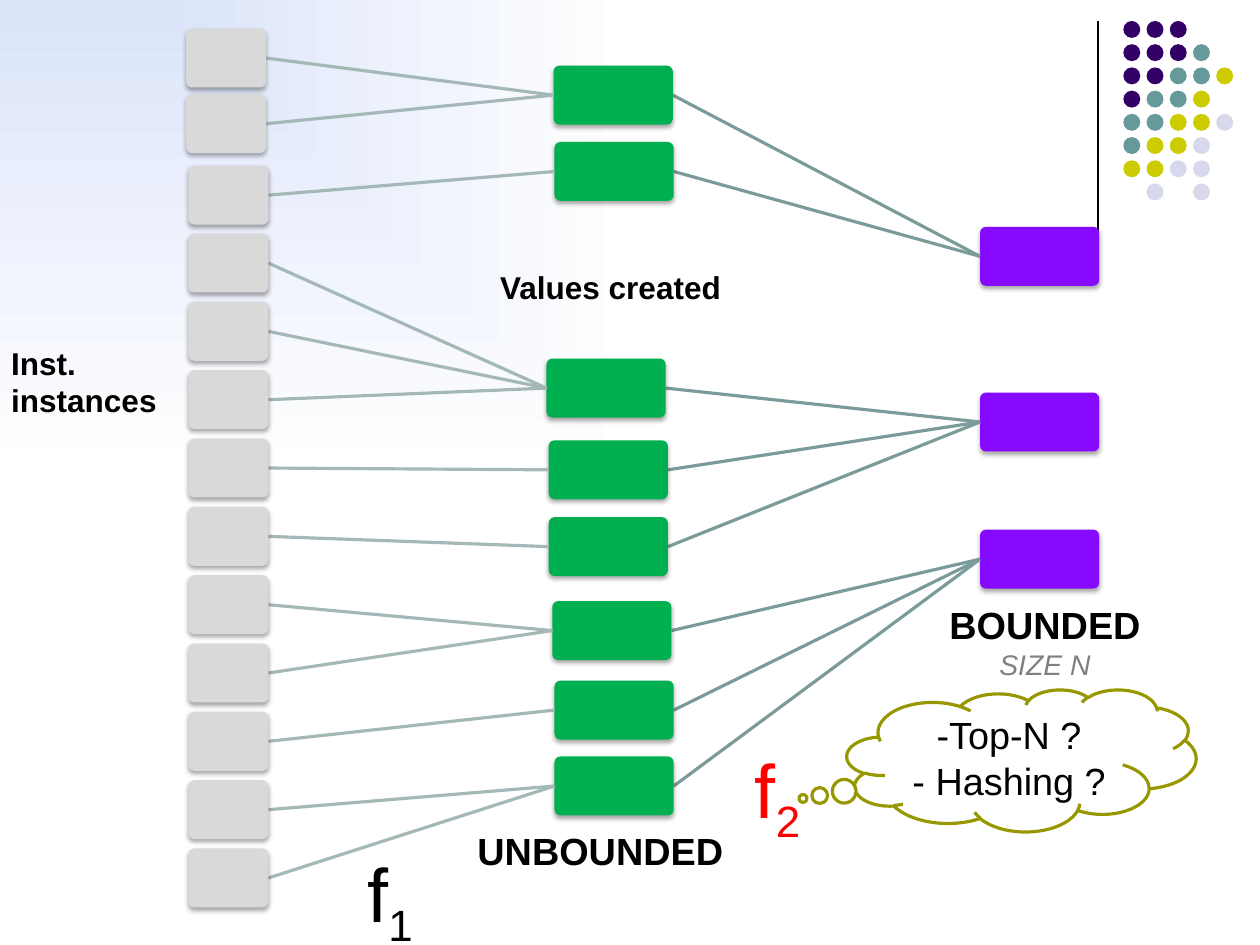
from lxml import etree
from pptx import Presentation
from pptx.dml.color import RGBColor
from pptx.enum.shapes import MSO_CONNECTOR, MSO_SHAPE
from pptx.enum.text import MSO_ANCHOR, PP_ALIGN
from pptx.oxml.ns import qn
from pptx.util import Cm, Pt

LINE = MSO_CONNECTOR.STRAIGHT
ROUND, OVAL = MSO_SHAPE.ROUNDED_RECTANGLE, MSO_SHAPE.OVAL
CLOUD = MSO_SHAPE.CLOUD_CALLOUT
LEFT, CENTER = PP_ALIGN.LEFT, PP_ALIGN.CENTER
MIDDLE = MSO_ANCHOR.MIDDLE

COLORS = {
    "black": "000000", "white": "FFFFFF", "red": "FF0000", "gray": "808080",
    "sky": "DBE4F9", "leaf": "D9D9D9", "value": "00B050", "bound": "850AFF",
    "near": "7B9B9B", "far": "A5B8B8", "olive": "979700",
    "P": "330066", "T": "669999", "Y": "CCCC00", "L": "D8D8EC",
}
DOTS = ["PPP", "PPPT", "PPTTY", "PTTY", "TTYYL", "TYYL", "YYLL", " L L"]

BOX_W, LEAF_W, BOX_H = 2.67, 1.79, 1.32
BOUND_X = 21.95
LEAVES = [(4.17, 0.64), (4.17, 2.11), (4.22, 3.71)]
LEAVES += [(4.22, 5.23 + 1.53 * i) for i in range(10)]
# Top of each bounded box, then left, top and leaf count of its values
TREES = [
    (5.08, [(12.4, 1.47, 2), (12.42, 3.18, 1)]),
    (8.79, [(12.24, 8.03, 3), (12.29, 9.86, 1), (12.29, 11.58, 1)]),
    (11.86, [(12.37, 13.46, 2), (12.42, 15.24, 1), (12.42, 16.94, 2)]),
]


def rgb(name):
    return RGBColor.from_string(COLORS[name])


def paint_back(slide):
    """Fade the background from the top left corner."""
    fill = slide.background.fill
    fill.gradient()
    for stop, name in zip(fill.gradient_stops, ("sky", "white")):
        stop.color.rgb = rgb(name)
    grad = slide.element.find(".//" + qn("a:gradFill"))
    grad.remove(grad.find(qn("a:lin")))
    path = etree.SubElement(grad, qn("a:path"), path="rect")
    etree.SubElement(path, qn("a:fillToRect"), r="100000", b="100000")


def add_line(slide, start, end, color, width):
    ends = [Cm(v) for v in (*start, *end)]
    line = slide.shapes.add_connector(LINE, *ends)
    line.line.color.rgb = rgb(color)
    line.line.width = Pt(width)
    etree.SubElement(line.element.spPr, qn("a:effectLst"))


def add_form(slide, kind, place, color):
    form = slide.shapes.add_shape(kind, *[Cm(v) for v in place])
    form.shadow.inherit = False
    form.fill.solid()
    form.fill.fore_color.rgb = rgb(color)
    form.line.fill.background()
    return form


def add_box(slide, x, y, width, color):
    """Add a rounded box with a soft shadow below it."""
    box = add_form(slide, ROUND, (x, y, width, BOX_H), color)
    box.adjustments[0] = 0.1
    glow = etree.SubElement(
        box.element.spPr.find(qn("a:effectLst")), qn("a:outerShdw"),
        blurRad="39400", dist="22900", dir="5400000", rotWithShape="0")
    tint = etree.SubElement(glow, qn("a:srgbClr"), val=COLORS["black"])
    etree.SubElement(tint, qn("a:alpha"), val="35000")


def add_area(slide, *place):
    area = slide.shapes.add_textbox(*[Cm(v) for v in place])
    area.text_frame.word_wrap = True
    return area


def write(shape, text, size=24, color="black", bold=False, italic=False,
          align=LEFT, sub=None):
    """Write one paragraph, with an optional subscript at its end."""
    frame = shape.text_frame
    para = frame.paragraphs[-1]
    if para.runs:
        para = frame.add_paragraph()
    para.alignment = align
    for part in filter(None, (text, sub)):
        run = para.add_run()
        run.text = part
        font = run.font
        font.name, font.size = "Arial", Pt(size)
        font.bold, font.italic = bold, italic
        font.color.rgb = rgb(color)
    if sub:
        run.font._element.set("baseline", "-25000")


def add_dots(slide):
    for row, marks in enumerate(DOTS):
        for col, mark in enumerate(marks):
            if mark != " ":
                place = (25.16 + 0.52 * col, 0.47 + 0.52 * row, 0.38, 0.38)
                add_form(slide, OVAL, place, mark)


def add_trees(slide):
    leaves = iter(LEAVES)
    half = BOX_H / 2
    for top, values in TREES:
        add_box(slide, BOUND_X, top, BOX_W, "bound")
        for x, y, count in values:
            add_line(slide, (BOUND_X, top + half), (x + BOX_W, y + half),
                     "near", 2)
            add_box(slide, x, y, BOX_W, "value")
            for _ in range(count):
                left, high = next(leaves)
                add_line(slide, (x, y + half), (left + LEAF_W, high + half),
                         "far", 2)
                add_box(slide, left, high, LEAF_W, "leaf")


def add_cloud(slide):
    cloud = add_form(slide, CLOUD, (18.97, 15.44, 7.82, 3.18), "white")
    cloud.adjustments[0], cloud.adjustments[1] = -0.626, 0.267
    cloud.line.color.rgb = rgb("olive")
    cloud.line.width = Pt(2)
    cloud.text_frame.vertical_anchor = MIDDLE
    for text in ("-Top-N ?", "- Hashing ?"):
        write(cloud, text, align=CENTER)


def add_labels(slide):
    write(add_area(slide, 0, 7.57, 4.37, 1.96), "Inst. instances",
          size=20, bold=True)
    write(add_area(slide, 10.95, 5.87, 6.35, 1.12), "Values created",
          size=20, bold=True)
    write(add_area(slide, 7.98, 18.85, 1.9, 2.31), "f", size=48, sub="1")
    write(add_area(slide, 16.66, 16.51, 1.9, 2.31), "f", size=48,
          color="red", sub="2")
    add_cloud(slide)
    write(add_area(slide, 10.08, 18.42, 6.73, 1.27), "UNBOUNDED",
          bold=True, align=CENTER)
    bound = add_area(slide, 20.04, 13.34, 6.73, 2.06)
    write(bound, "BOUNDED", bold=True, align=CENTER)
    write(bound, "SIZE N", size=18, color="gray", italic=True, align=CENTER)


def main():
    deck = Presentation()
    deck.slide_width, deck.slide_height = Cm(28.22), Cm(21.16)
    slide = deck.slides.add_slide(deck.slide_layouts[6])
    paint_back(slide)
    add_line(slide, (24.59, 0.48), (24.59, 5.18), "black", 0.75)
    add_dots(slide)
    add_trees(slide)
    add_labels(slide)
    deck.save("out.pptx")


if __name__ == "__main__":
    main()
